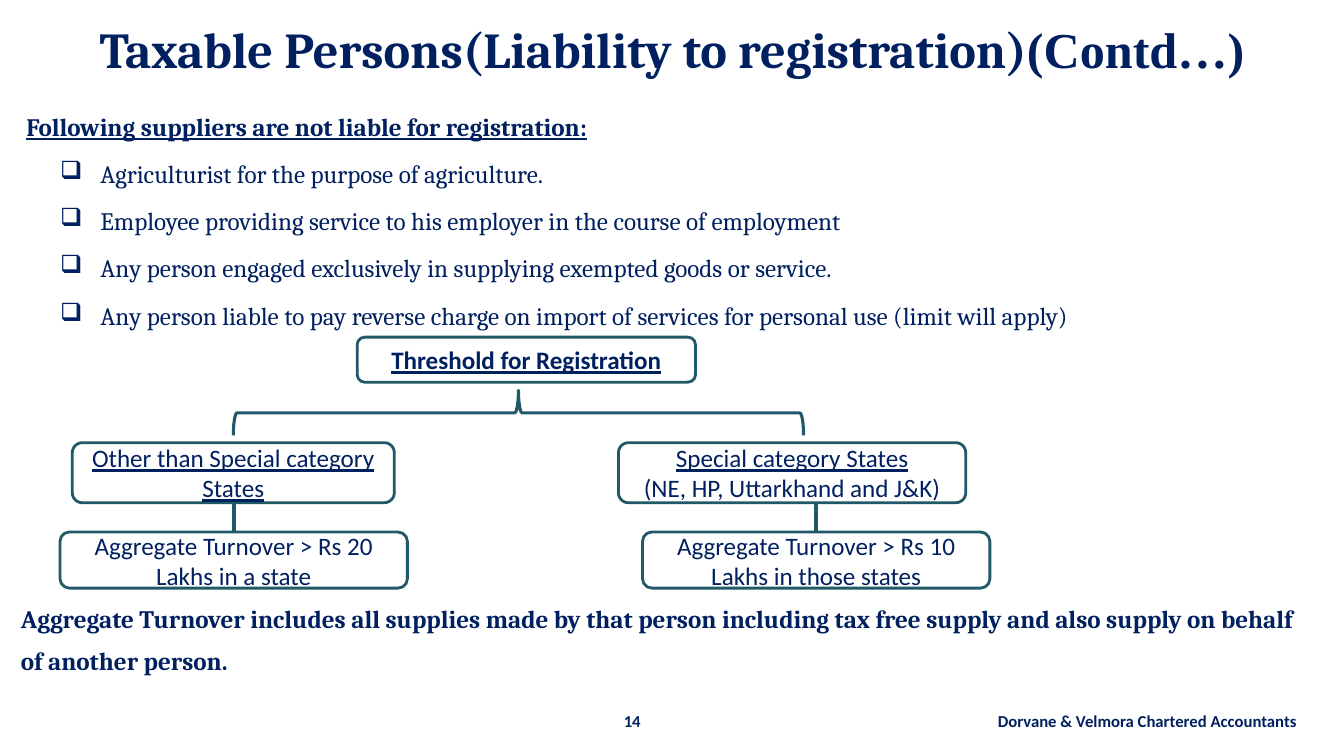
from lxml import etree
from pptx import Presentation
from pptx.dml.color import RGBColor
from pptx.enum.shapes import MSO_CONNECTOR, MSO_SHAPE
from pptx.enum.text import MSO_ANCHOR, PP_ALIGN
from pptx.oxml.ns import qn
from pptx.util import Cm, Pt

ROUNDED = MSO_SHAPE.ROUNDED_RECTANGLE
BRACE = MSO_SHAPE.RIGHT_BRACE
STRAIGHT = MSO_CONNECTOR.STRAIGHT
MIDDLE, TOP = MSO_ANCHOR.MIDDLE, MSO_ANCHOR.TOP
LEFT, CENTER, RIGHT = PP_ALIGN.LEFT, PP_ALIGN.CENTER, PP_ALIGN.RIGHT

COLORS = {"navy": "002060", "teal": "215968"}
EXEMPT_SUPPLIERS = [
    "Agriculturist for the purpose of agriculture.",
    "Employee providing service to his employer in the course of employment",
    "Any person engaged exclusively in supplying exempted goods or service.",
    "Any person liable to pay reverse charge on import of services for personal use (limit will apply)",
]
CLOSING = (
    "Aggregate Turnover includes all supplies made by that person including "
    "tax free supply and also supply on behalf of another person."
)


def color(name):
    """Return the named palette colour."""
    return RGBColor.from_string(COLORS[name])


def add_span(para, text, size=18, font="Calibri", bold=False, underline=False):
    """Append one formatted run to a paragraph."""
    span = para.add_run()
    span.text = text
    span.font.size = Pt(size)
    span.font.name = font
    span.font.bold = bold
    span.font.underline = underline
    span.font.color.rgb = color("navy")


def add_box(page, left, top, width, height, align=LEFT, anchor=TOP):
    """Add a wrapping text box and return its frame."""
    box = page.shapes.add_textbox(Cm(left), Cm(top), Cm(width), Cm(height))
    frame = box.text_frame
    frame.word_wrap = True
    frame.vertical_anchor = anchor
    frame.paragraphs[0].alignment = align
    return frame


def add_body_text(para, text, bold=False, underline=False):
    """Fill a widely spaced body paragraph."""
    para.line_spacing = 1.4
    para.space_before = Pt(3.6)
    add_span(para, text, font="Cambria", bold=bold, underline=underline)


def set_indent(para, margin, indent=0, bullet=None):
    """Set a paragraph's indents and optional bullet."""
    properties = para._p.get_or_add_pPr()
    properties.set("marL", str(Cm(margin)))
    properties.set("indent", str(Cm(indent)))
    if bullet:
        etree.SubElement(properties, qn("a:buChar")).set("char", bullet)


def add_outline(page, kind, left, top, width, height):
    """Add an unfilled preset shape with a teal outline."""
    shape = page.shapes.add_shape(kind, Cm(left), Cm(top), Cm(width), Cm(height))
    shape.shadow.inherit = False
    shape.fill.background()
    shape.line.color.rgb = color("teal")
    shape.line.width = Pt(2.25 if kind == BRACE else 2)
    return shape


def add_node(page, left, top, width, height, lines):
    """Add a chart node from (text, bold, underline) lines."""
    frame = add_outline(page, ROUNDED, left, top, width, height).text_frame
    frame.word_wrap = True
    frame.vertical_anchor = MIDDLE
    for index, (text, bold, underline) in enumerate(lines):
        para = frame.add_paragraph() if index else frame.paragraphs[0]
        para.alignment = CENTER
        add_span(para, text, bold=bold, underline=underline)


def add_stem(page, x, top, bottom):
    """Add a vertical connecting line."""
    stem = page.shapes.add_connector(STRAIGHT, Cm(x), Cm(top), Cm(x), Cm(bottom))
    stem.line.color.rgb = color("teal")
    stem.line.width = Pt(2.25)
    etree.SubElement(stem._element.spPr, qn("a:effectLst"))


def add_title(page):
    """Add the slide title."""
    para = add_box(page, 0, 0.25, 34.01, 1.93, CENTER, MIDDLE).paragraphs[0]
    add_span(para, "Taxable Persons(Liability to registration)", 36, "Cambria", True)
    add_span(para, "(Contd…)", 36, "Times New Roman", True)


def add_body(page):
    """Add the list of exempt suppliers and the closing statement."""
    frame = add_box(page, 0.28, 2.39, 32.79, 6.1)
    heading = frame.paragraphs[0]
    set_indent(heading, 0.14)
    add_body_text(heading, "Following suppliers are not liable for registration:", True, True)
    for supplier in EXEMPT_SUPPLIERS:
        para = frame.add_paragraph()
        add_body_text(para, supplier)
        set_indent(para, 2.01, -1.02, "❑")
    closing = add_box(page, 0.28, 14.83, 32.79, 2.4).paragraphs[0]
    add_body_text(closing, CLOSING, True)


def add_threshold_chart(page):
    """Add the tree of registration thresholds."""
    add_node(page, 9.04, 8.53, 8.56, 1.14, [("Threshold for Registration", True, True)])
    add_outline(page, BRACE, 12.55, 3.23, 1.14, 14.43).rotation = 270
    special = [
        ("Special category States", False, True),
        ("(NE, HP, Uttarkhand and J&K)", False, False),
    ]
    other = [("Other than Special category States", False, True)]
    branches = [
        (1.83, 8.15, other, 5.92, 1.52, "Aggregate Turnover > Rs 20 Lakhs in a state"),
        (15.65, 8.79, special, 20.65, 16.26, "Aggregate Turnover > Rs 10 Lakhs in those states"),
    ]
    for left, width, states, stem_x, limit_left, limit in branches:
        add_node(page, left, 11.2, width, 1.52, states)
        add_stem(page, stem_x, 12.73, 13.44)
        add_node(page, limit_left, 13.46, 8.79, 1.42, [(limit, False, False)])


def add_footer(page):
    """Add the page number and the firm's name."""
    number = add_box(page, 15.25, 17.86, 1.5, 0.9, CENTER)
    add_span(number.paragraphs[0], "14", 12, bold=True)
    firm = add_box(page, 22, 17.86, 11.07, 0.9, RIGHT)
    add_span(firm.paragraphs[0], "Dorvane & Velmora Chartered Accountants", 12, bold=True)


def main():
    """Build and save the slide."""
    deck = Presentation()
    deck.slide_width, deck.slide_height = Cm(34.01), Cm(19.05)
    page = deck.slides.add_slide(deck.slide_layouts[6])
    add_body(page)
    add_title(page)
    add_footer(page)
    add_threshold_chart(page)
    deck.save("out.pptx")


if __name__ == "__main__":
    main()
